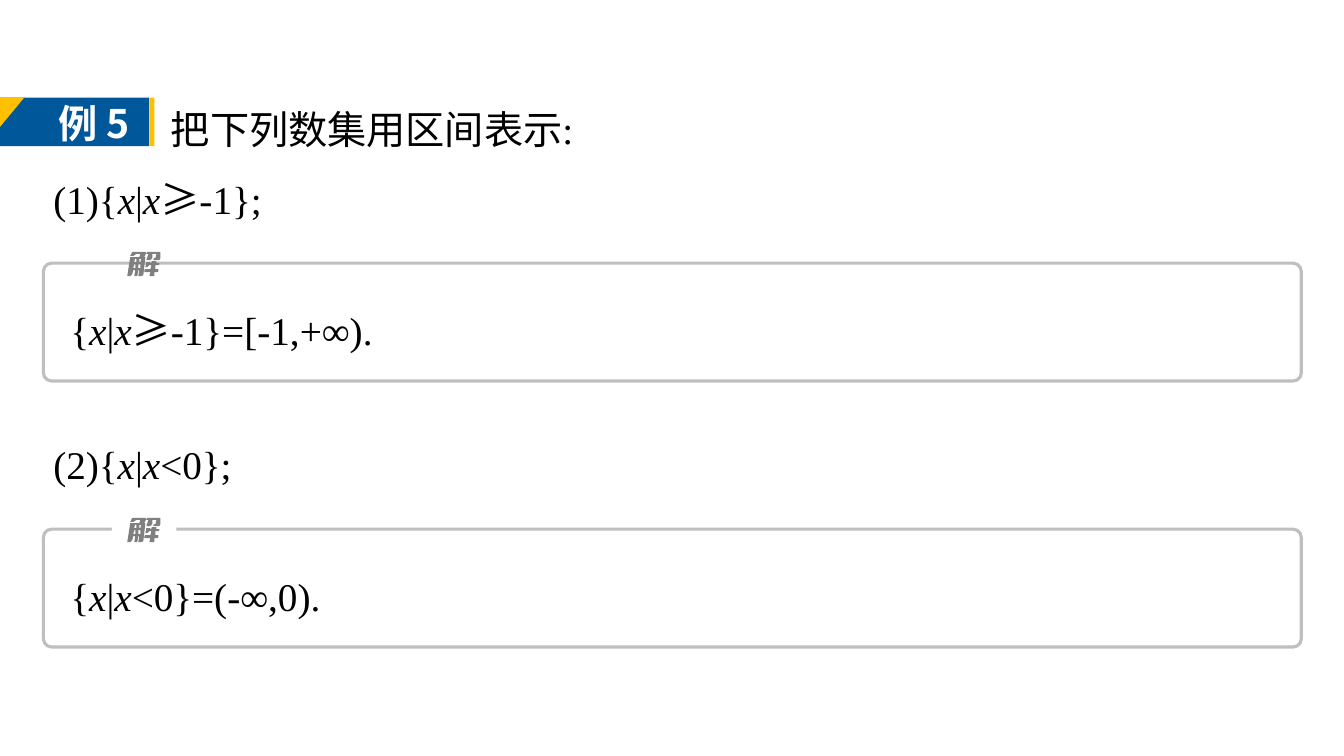
from itertools import groupby

from lxml import etree
from pptx import Presentation
from pptx.dml.color import RGBColor
from pptx.enum.shapes import MSO_SHAPE
from pptx.oxml.ns import qn
from pptx.util import Pt

COLORS = {"text": "000000", "white": "FFFFFF", "blue": "00589A",
          "yellow": "FFC000", "border": "BFBFBF", "mark": "808080"}
SERIF = "Times New Roman"
SANS = "Noto Sans CJK SC"
TEXT_SIZE = 28
MARK_UNIT = 0.72
LEFT, WIDTH = 31, 898.5

# Contours of the character 解, on a grid of 33 by 24 units
MARK_CONTOURS = [
    [(11, 12), (11, 16), (13, 16), (13, 12)],
    [(7, 12), (6, 16), (8, 16), (8, 12)],
    [(25, 9), (29, 9), (29, 11), (32, 11), (32, 12), (31, 13), (28, 13),
     (28, 17), (31, 17), (31, 19), (30, 20), (27, 20), (27, 24), (22, 24),
     (23, 20), (17, 20), (17, 18), (18, 17), (23, 17), (24, 13), (22, 13),
     (20, 15), (18, 15), (19, 10), (23, 10), (23, 11), (24, 11), (24, 10)],
    [(12, 7), (12, 10), (13, 10), (14, 7)],
    [(20, 0), (33, 0), (33, 6), (32, 8), (26, 8), (26, 7), (27, 6), (28, 6),
     (29, 2), (25, 2), (25, 6), (23, 8), (19, 8), (21, 2), (19, 2)],
    [(5, 0), (18, 0), (19, 1), (17, 5), (18, 5), (16, 23), (14, 24), (11, 24),
     (12, 18), (11, 18), (10, 24), (7, 24), (8, 18), (6, 18), (5, 22), (3, 24),
     (0, 24), (3, 5), (8, 5), (7, 10), (9, 10), (9, 7), (8, 7), (8, 5),
     (12, 5), (13, 2), (9, 2), (6, 4), (3, 4)],
]


def rgb(name):
    return RGBColor.from_string(COLORS[name])


def paint(shape, color):
    shape.shadow.inherit = False
    shape.fill.solid()
    shape.fill.fore_color.rgb = rgb(color)
    shape.line.fill.background()


def add_block(page, kind, box, color):
    shape = page.shapes.add_shape(kind, *map(Pt, box))
    paint(shape, color)
    return shape


def add_span(para, text, font=SERIF, color="text", **formats):
    span = para.add_run()
    span.text = text
    for name, value in {"name": font, "size": Pt(TEXT_SIZE), **formats}.items():
        setattr(span.font, name, value)
    span.font.color.rgb = rgb(color)
    east_asian = etree.SubElement(span.font._element, qn("a:ea"))
    east_asian.set("typeface", SANS)


def add_math(para, text):
    """Set x in italics and the ≥ sign in the sans font."""
    for symbol, letters in groupby(text, lambda c: c if c in "x≥" else ""):
        add_span(para, "".join(letters), SANS if symbol == "≥" else SERIF,
                 italic=symbol == "x")


def add_text_frame(page, box):
    frame = page.shapes.add_textbox(*map(Pt, box)).text_frame
    frame.word_wrap = True
    return frame


def add_formula(page, box, text):
    para = add_text_frame(page, box).paragraphs[0]
    para.line_spacing = 1.5
    add_math(para, text)


def add_question(page, box, heading, first_part):
    frame = add_text_frame(page, box)
    title, part = frame.paragraphs[0], frame.add_paragraph()
    title.line_spacing = part.line_spacing = 1.5
    title._p.get_or_add_pPr().set("indent", str(Pt(3 * TEXT_SIZE)))
    add_span(title, heading)
    add_math(part, first_part)


def add_badge(page, box):
    left, top, width, height = box
    add_block(page, MSO_SHAPE.RECTANGLE, box, "blue")
    corner = add_block(page, MSO_SHAPE.RIGHT_TRIANGLE,
                       (left, top, 17.3, 20.9), "yellow")
    corner._element.spPr.xfrm.set("flipV", "1")
    add_block(page, MSO_SHAPE.RECTANGLE,
              (left + width, top, 3.6, height), "yellow")
    label = add_text_frame(page, (left + 34.6, top - 2.2, 72, 41)).paragraphs[0]
    add_span(label, "例 ", color="white", bold=True)
    add_span(label, "5", SANS, "white", bold=True)


def add_solution_mark(page, left, top):
    builder = None
    for start, *rest in MARK_CONTOURS:
        if builder is None:
            builder = page.shapes.build_freeform(*start, scale=Pt(MARK_UNIT))
        else:
            builder.move_to(*start)
        builder.add_line_segments(rest, close=True)
    paint(builder.convert_to_shape(Pt(left), Pt(top)), "mark")


def add_solution(page, box, text, gap_in_border):
    left, top, width, height = box
    frame = page.shapes.add_shape(MSO_SHAPE.ROUNDED_RECTANGLE, *map(Pt, box))
    frame.adjustments[0] = 0.07
    frame.shadow.inherit = False
    frame.fill.background()
    frame.line.color.rgb = rgb("border")
    frame.line.width = Pt(2.25)
    if gap_in_border:
        add_block(page, MSO_SHAPE.RECTANGLE,
                  (left + 49, top - 8.6, 46, 17.3), "white")
    add_solution_mark(page, left + 59.9, top - 8)
    add_formula(page, (left + 12.2, top + 10.8, width - 31, 52.6), text)


def main():
    deck = Presentation()
    deck.slide_width, deck.slide_height = Pt(960), Pt(540)
    page = deck.slides.add_slide(deck.slide_layouts[6])
    add_question(page, (LEFT, 54.7, WIDTH, 108.7),
                 "把下列数集用区间表示:", "(1){x|x≥-1};")
    add_badge(page, (0, 69.8, 106.6, 34.6))
    add_solution(page, (LEFT, 188, WIDTH, 84.2), "{x|x≥-1}=[-1,+∞).", False)
    add_formula(page, (LEFT, 293.8, 205, 58.3), "(2){x|x<0};")
    add_solution(page, (LEFT, 378, WIDTH, 84.2), "{x|x<0}=(-∞,0).", True)
    deck.save("out.pptx")


if __name__ == "__main__":
    main()
